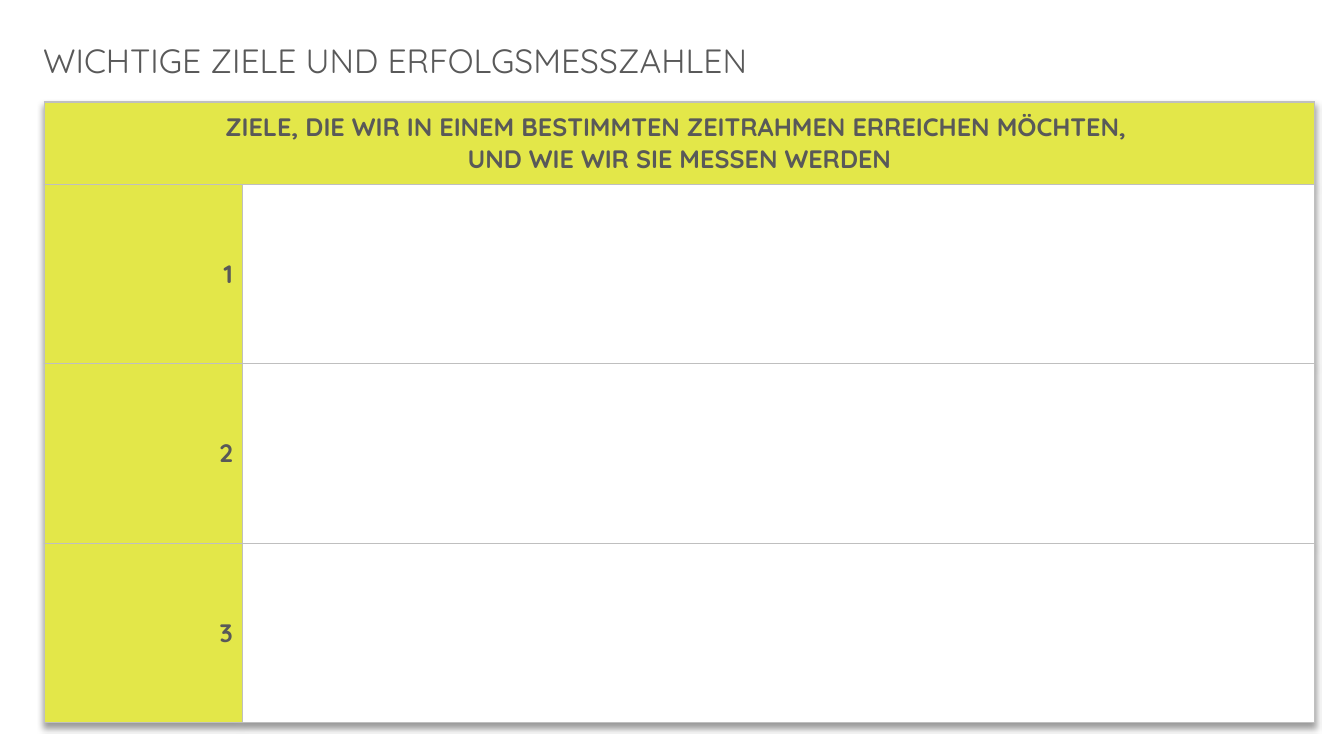
from dataclasses import dataclass

from lxml import etree
from pptx import Presentation
from pptx import util as u
from pptx.dml import color
from pptx.enum import text
from pptx.oxml import ns, parse_xml


@dataclass(frozen=True)
class Theme:
    font: str = "Quicksand"
    ink: str = "595959"
    accent: str = "E3E749"
    paper: str = "FFFFFF"
    grid: str = "BFBFBF"
    grid_width: int = u.Pt(1)
    title_size: int = u.Pt(24)
    table_size: int = u.Pt(18)


@dataclass(frozen=True)
class CellStyle:
    fill: str
    align: text.PP_ALIGN


THEME = Theme()
HEADING = CellStyle(THEME.accent, text.PP_ALIGN.CENTER)
NUMBER = CellStyle(THEME.accent, text.PP_ALIGN.RIGHT)
ENTRY = CellStyle(THEME.paper, text.PP_ALIGN.LEFT)

TITLE = "WICHTIGE ZIELE UND ERFOLGSMESSZAHLEN"
TABLE_HEADING = (
    "ZIELE, DIE WIR IN EINEM BESTIMMTEN ZEITRAHMEN ERREICHEN MÖCHTEN, \v"
    "UND WIE WIR SIE MESSEN WERDEN"
)
GOAL_COUNT = 3
COLUMN_WIDTHS = (u.Cm(5), u.Cm(27))
ROW_HEIGHTS = (u.Cm(2.08),) + (u.Cm(4.52),) * GOAL_COUNT


def format_runs(paragraph, size: int, bold: bool = False) -> None:
    for run in paragraph.runs:
        run.font.name = THEME.font
        run.font.size = size
        run.font.bold = bold
        run.font.color.rgb = color.RGBColor.from_string(THEME.ink)


def draw_borders(cell) -> None:
    """Put the four grid lines ahead of the fill, as the schema requires."""
    properties = cell._tc.get_or_add_tcPr()
    for position, side in enumerate(("lnL", "lnR", "lnT", "lnB")):
        line = etree.Element(ns.qn(f"a:{side}"), w=str(int(THEME.grid_width)))
        solid = etree.SubElement(line, ns.qn("a:solidFill"))
        etree.SubElement(solid, ns.qn("a:srgbClr"), val=THEME.grid)
        properties.insert(position, line)


def fill_cell(cell, style: CellStyle, wording: str = "") -> None:
    cell.fill.solid()
    cell.fill.fore_color.rgb = color.RGBColor.from_string(style.fill)
    cell.vertical_anchor = text.MSO_ANCHOR.MIDDLE
    draw_borders(cell)
    paragraph = cell.text_frame.paragraphs[0]
    paragraph.text = wording
    paragraph.alignment = style.align
    format_runs(paragraph, THEME.table_size, bold=True)


def add_table_shadow(table) -> None:
    shadow = parse_xml(
        f'<a:effectLst {ns.nsdecls("a")}>'
        '<a:outerShdw blurRad="50800" dist="38100" dir="5400000" algn="t" rotWithShape="0">'
        '<a:srgbClr val="000000"><a:alpha val="40000"/></a:srgbClr>'
        "</a:outerShdw></a:effectLst>"
    )
    table._tbl.tblPr.insert(0, shadow)


def add_title(slide) -> None:
    title = slide.shapes.add_textbox(u.Cm(0.84), u.Cm(0.89), u.Cm(20.52), u.Cm(1.27))
    title.text_frame.word_wrap = True
    title.text_frame.text = TITLE
    format_runs(title.text_frame.paragraphs[0], THEME.title_size)


def add_goal_table(slide) -> None:
    goals = slide.shapes.add_table(
        len(ROW_HEIGHTS), len(COLUMN_WIDTHS),
        u.Cm(1.12), u.Cm(2.57), sum(COLUMN_WIDTHS), sum(ROW_HEIGHTS),
    ).table
    for column, width in zip(goals.columns, COLUMN_WIDTHS):
        column.width = width
    for row, height in zip(goals.rows, ROW_HEIGHTS):
        row.height = height
    add_table_shadow(goals)

    goals.cell(0, 0).merge(goals.cell(0, 1))
    fill_cell(goals.cell(0, 0), HEADING, TABLE_HEADING)
    fill_cell(goals.cell(0, 1), HEADING)
    for number in range(1, GOAL_COUNT + 1):
        fill_cell(goals.cell(number, 0), NUMBER, str(number))
        fill_cell(goals.cell(number, 1), ENTRY)


def main() -> None:
    deck = Presentation()
    deck.slide_width, deck.slide_height = u.Cm(33.87), u.Cm(19.05)
    slide = deck.slides.add_slide(deck.slide_layouts[6])
    add_title(slide)
    add_goal_table(slide)
    deck.save("out.pptx")


if __name__ == "__main__":
    main()
